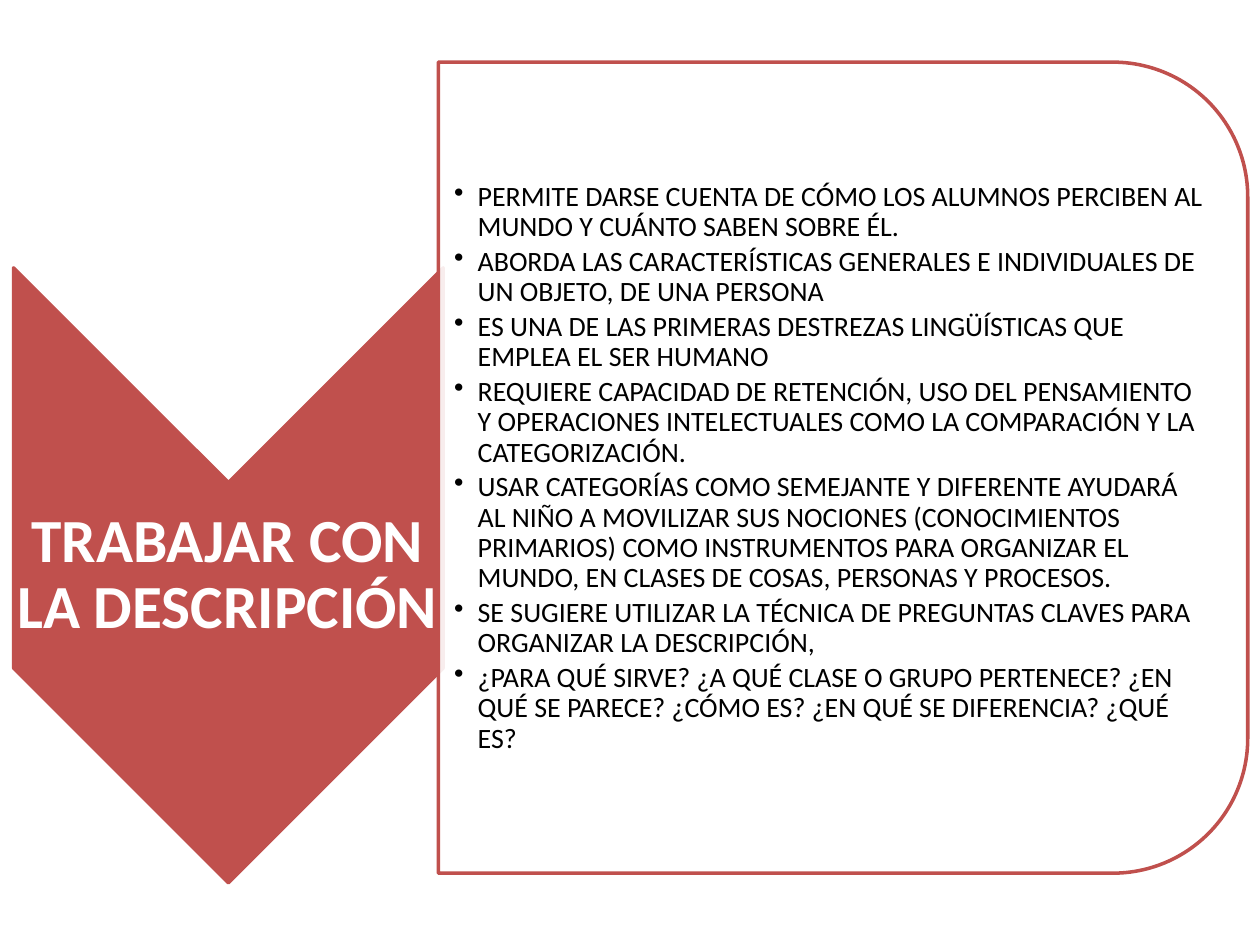
"""Build a slide on working with description: a chevron heading beside a bulleted panel."""
import pptx
import pptx.dml.color
import pptx.enum.shapes
import pptx.enum.text
import pptx.oxml
import pptx.oxml.ns
import pptx.util
import lxml.etree

Pt = pptx.util.Pt
RGBColor = pptx.dml.color.RGBColor
MSO_SHAPE = pptx.enum.shapes.MSO_SHAPE
PP_ALIGN = pptx.enum.text.PP_ALIGN
qn = pptx.oxml.ns.qn

COLORS = {"red": "C0504D", "white": "FFFFFF", "black": "000000"}
POINTS = [
    "PERMITE DARSE CUENTA DE CÓMO LOS ALUMNOS PERCIBEN AL MUNDO Y CUÁNTO SABEN SOBRE ÉL.",
    "ABORDA LAS CARACTERÍSTICAS GENERALES E INDIVIDUALES DE UN OBJETO, DE UNA PERSONA",
    "ES UNA DE LAS PRIMERAS DESTREZAS LINGÜÍSTICAS QUE EMPLEA EL SER HUMANO",
    "REQUIERE CAPACIDAD DE RETENCIÓN, USO DEL PENSAMIENTO Y OPERACIONES INTELECTUALES "
    "COMO LA COMPARACIÓN Y LA CATEGORIZACIÓN.",
    "USAR CATEGORÍAS COMO SEMEJANTE Y DIFERENTE AYUDARÁ AL NIÑO A MOVILIZAR SUS NOCIONES "
    "(CONOCIMIENTOS PRIMARIOS) COMO INSTRUMENTOS PARA ORGANIZAR EL MUNDO, EN CLASES DE COSAS, "
    "PERSONAS Y PROCESOS.",
    "SE SUGIERE UTILIZAR LA TÉCNICA DE PREGUNTAS CLAVES PARA ORGANIZAR LA DESCRIPCIÓN,",
    "¿PARA QUÉ SIRVE? ¿A QUÉ CLASE O GRUPO PERTENECE? ¿EN QUÉ SE PARECE? ¿CÓMO ES? "
    "¿EN QUÉ SE DIFERENCIA? ¿QUÉ ES?",
]


def write_text(box, texts, size, color, align, bold=False, bullet=False, after=0, insets=(0, 0, 0, 0)):
    """Fill a text box with one formatted paragraph per text."""
    frame = box.text_frame
    frame.word_wrap = True
    frame.auto_size = pptx.enum.text.MSO_AUTO_SIZE.NONE
    frame.vertical_anchor = pptx.enum.text.MSO_ANCHOR.MIDDLE
    frame.margin_left, frame.margin_top, frame.margin_right, frame.margin_bottom = map(Pt, insets)
    for index, text in enumerate(texts):
        para = frame.add_paragraph() if index else frame.paragraphs[0]
        para.alignment = align
        para.line_spacing = 0.9
        para.space_before = Pt(0)
        para.space_after = Pt(after)
        if bullet:
            para.level = 1
            properties = para._p.get_or_add_pPr()
            properties.set("marL", str(Pt(13.5)))
            properties.set("indent", str(Pt(-13.5)))
            lxml.etree.SubElement(properties, qn("a:buChar")).set("char", "•")
        span = para.add_run()
        span.text = text
        span.font.name = "Calibri"
        span.font.size = Pt(size)
        span.font.bold = bold
        span.font.color.rgb = RGBColor.from_string(COLORS[color])


def add_turned_shape(page, kind, bounds, fill):
    """Add a red-outlined shape turned a quarter clockwise."""
    shape = page.shapes.add_shape(kind, *map(Pt, bounds))
    shape.rotation = 90
    shape.shadow.inherit = False
    shape.fill.solid()
    shape.fill.fore_color.rgb = RGBColor.from_string(COLORS[fill])
    shape.line.color.rgb = RGBColor.from_string(COLORS["red"])
    shape.line.width = Pt(2)
    return shape


deck = pptx.Presentation()
deck.slide_width, deck.slide_height = Pt(720), Pt(540)
page = deck.slides.add_slide(deck.slide_layouts[5])

chevron = add_turned_shape(page, MSO_SHAPE.CHEVRON, (-45.2, 206, 351.4, 245.5), "red")

title = page.shapes.title
title.left, title.top, title.width, title.height = map(Pt, (7.2, 276.5, 245.5, 105))
write_text(title, ["TRABAJAR CON LA DESCRIPCIÓN"], size=35, color="white",
           align=PP_ALIGN.CENTER, bold=True, insets=(1.5, 1.5, 1.5, 1.5))
chevron.element.addnext(title.element)

panel = add_turned_shape(page, MSO_SHAPE.ROUND_2_SAME_RECTANGLE, (250, 36, 463.5, 462.5), "white")
panel_color = panel.element.spPr.find(qn("a:solidFill")).find(qn("a:srgbClr"))
lxml.etree.SubElement(panel_color, qn("a:alpha")).set("val", "90000")

body = page.shapes.add_textbox(*map(Pt, (250.5, 58.5, 440, 418)))
write_text(body, POINTS, size=16, color="black", align=PP_ALIGN.LEFT,
           bullet=True, after=2.7, insets=(9, 0.8, 0.8, 0.8))

deck.save("out.pptx")
